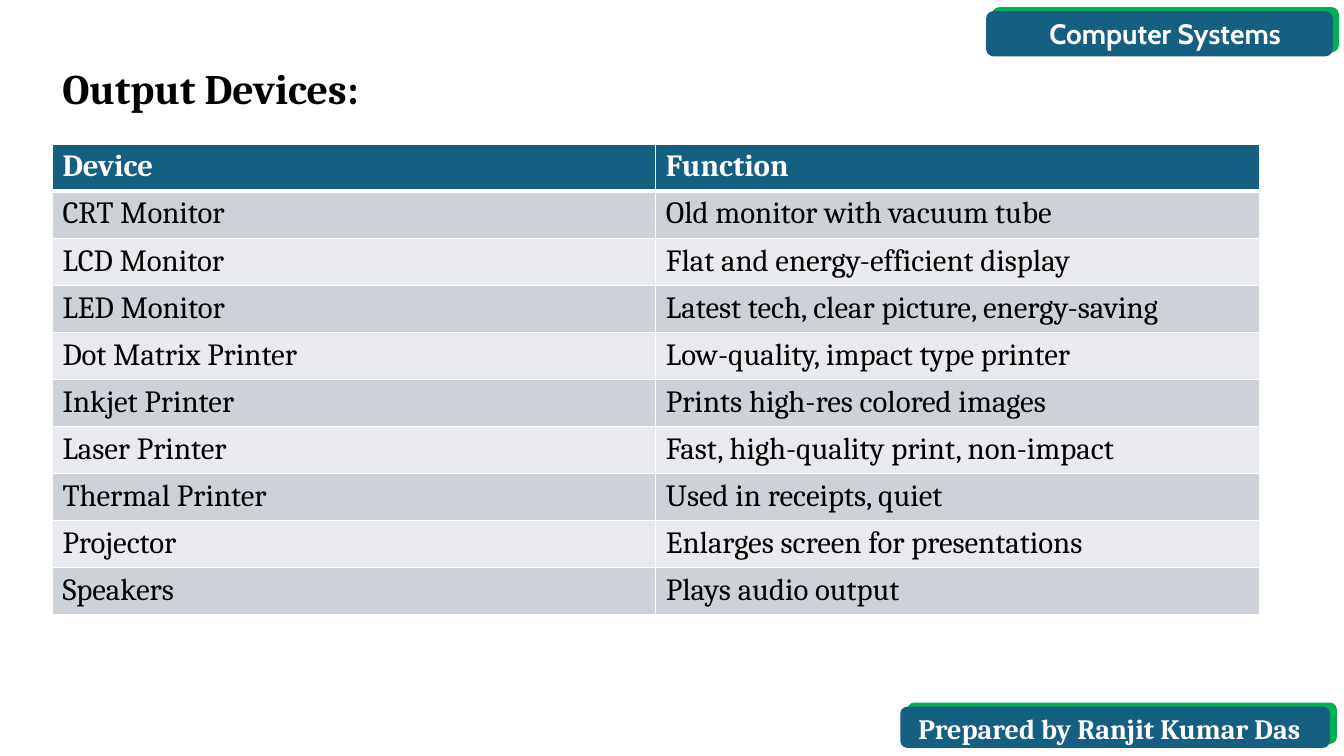
from pptx import Presentation
from pptx.dml.color import RGBColor
from pptx.enum.shapes import MSO_SHAPE
from pptx.enum.text import MSO_AUTO_SIZE, PP_ALIGN
from pptx.oxml import parse_xml
from pptx.oxml.ns import nsdecls
from pptx.util import Inches, Pt

COLORS = {
    "teal": "156082",
    "green": "00B050",
    "white": "FFFFFF",
    "black": "000000",
    "dark_band": "CCD2D8",
    "light_band": "E8EAED",
}

DEVICES = [
    ("Device", "Function"),
    ("CRT Monitor", "Old monitor with vacuum tube"),
    ("LCD Monitor", "Flat and energy-efficient display"),
    ("LED Monitor", "Latest tech, clear picture, energy-saving"),
    ("Dot Matrix Printer", "Low-quality, impact type printer"),
    ("Inkjet Printer", "Prints high-res colored images"),
    ("Laser Printer", "Fast, high-quality print, non-impact"),
    ("Thermal Printer", "Used in receipts, quiet"),
    ("Projector", "Enlarges screen for presentations"),
    ("Speakers", "Plays audio output"),
]


def rgb(name):
    return RGBColor.from_string(COLORS[name])


def style(paragraph, size, color, font="Cambria", bold=True):
    paragraph.font.name = font
    paragraph.font.size = Pt(size)
    paragraph.font.bold = bold
    paragraph.font.color.rgb = rgb(color)


def add_text(shapes, box, text, size, color, font="Cambria", align=PP_ALIGN.LEFT):
    label = shapes.add_textbox(*map(Inches, box))
    frame = label.text_frame
    frame.word_wrap = True
    frame.auto_size = MSO_AUTO_SIZE.SHAPE_TO_FIT_TEXT
    paragraph = frame.paragraphs[0]
    paragraph.text = text
    paragraph.alignment = align
    style(paragraph, size, color, font)


def add_banner(slide, box, back_shift, label_box, text, **text_style):
    """Teal rounded bar with a green one peeking out above and to the right."""
    banner = slide.shapes.add_group_shape()
    left, top, width, height = box
    for color, dx, dy in (("green", back_shift, -0.04), ("teal", 0, 0)):
        bar = banner.shapes.add_shape(
            MSO_SHAPE.ROUNDED_RECTANGLE,
            *map(Inches, (left + dx, top + dy, width, height)))
        bar.shadow.inherit = False
        bar.fill.solid()
        bar.fill.fore_color.rgb = rgb(color)
        bar.line.fill.background()
    add_text(banner.shapes, label_box, text, 20, "white", **text_style)


def set_borders(cell, bottom_width):
    properties = cell._tc.get_or_add_tcPr()
    widths = {"lnL": 1, "lnR": 1, "lnT": 1, "lnB": bottom_width}
    for index, (side, width) in enumerate(widths.items()):
        properties.insert(index, parse_xml(
            f'<a:{side} {nsdecls("a")} w="{Pt(width)}"><a:solidFill>'
            f'<a:srgbClr val="{COLORS["white"]}"/></a:solidFill></a:{side}>'))


def add_device_table(slide, box):
    table = slide.shapes.add_table(
        len(DEVICES), len(DEVICES[0]), *map(Inches, box)).table
    for row, texts in enumerate(DEVICES):
        header = row == 0
        band = "teal" if header else ("light_band", "dark_band")[row % 2]
        for column, text in enumerate(texts):
            cell = table.cell(row, column)
            cell.text = text
            cell.fill.solid()
            cell.fill.fore_color.rgb = rgb(band)
            style(cell.text_frame.paragraphs[0], 22,
                  "white" if header else "black", bold=header)
            set_borders(cell, 3 if header else 1)
            if row == 1:
                # The thick header rule is shared with the first body row
                cell._tc.tcPr[2].set("w", str(Pt(3)))


def main():
    deck = Presentation()
    deck.slide_width, deck.slide_height = Inches(13.33), Inches(7.5)
    slide = deck.slides.add_slide(deck.slide_layouts[6])

    # Author footer and course header
    add_banner(slide, (8.93, 7.01, 4.26, 0.41), 0.07, (9.01, 7.01, 4.24, 0.44),
               "Prepared by Ranjit Kumar Das")
    add_banner(slide, (9.78, 0.11, 3.44, 0.45), 0.06, (9.84, 0.11, 3.43, 0.44),
               "Computer Systems", font="Cabin", align=PP_ALIGN.CENTER)

    # Title and device table
    add_text(slide.shapes, (0.52, 0.57, 12.3, 0.61), "Output Devices:", 30, "black")
    add_device_table(slide, (0.52, 1.43, 11.97, 4.67))

    deck.save("out.pptx")


if __name__ == "__main__":
    main()
